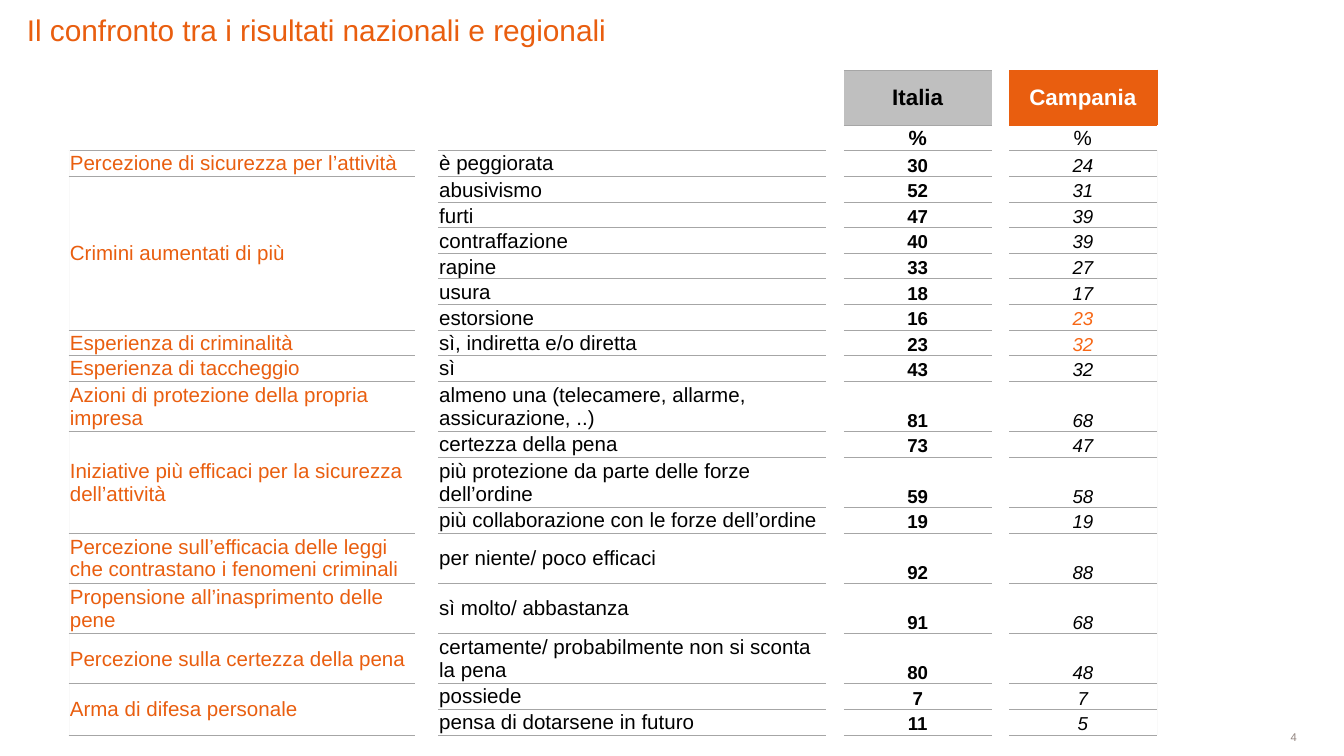
from lxml import etree
from pptx import Presentation
from pptx import util as u
from pptx.dml.color import RGBColor
from pptx.enum import text
from pptx.oxml import ns

ORANGE = RGBColor(0xE9, 0x5E, 0x0F)
HIGHLIGHT = RGBColor(0xF7, 0x67, 0x15)
GREY = RGBColor(0xBF, 0xBF, 0xBF)
RULE = RGBColor(0xA6, 0xA6, 0xA6)
PALE = RGBColor(0xF9, 0xF9, 0xF9)
NUMBER_GREY = RGBColor(0x92, 0x85, 0x80)
WHITE = RGBColor(0xFF, 0xFF, 0xFF)
BLACK = RGBColor(0x00, 0x00, 0x00)

WIDTH = u.Inches(10)
HEIGHT = WIDTH * 9 // 16
PLAIN_STYLE = "{2D5ABB26-0587-4C30-8999-92F81FD0307C}"
COLUMNS = (2.58, 0.17, 2.89, 0.13, 1.1, 0.13, 1.1)
TOPIC, ANSWER, ITALY, REGION = 0, 2, 4, 6
HEADER_ROW, SINGLE_ROW, DOUBLE_ROW = 0.41, 0.18, 0.36
DOUBLE_ROWS = (11, 15, 17)

LEFT, CENTER, RIGHT = text.PP_ALIGN.LEFT, text.PP_ALIGN.CENTER, text.PP_ALIGN.RIGHT
MIDDLE, BOTTOM = text.MSO_ANCHOR.MIDDLE, text.MSO_ANCHOR.BOTTOM

TOPICS = [
    ("Percezione di sicurezza per l’attività", [("è peggiorata", 30, 24)]),
    ("Crimini aumentati di più", [
        ("abusivismo", 52, 31), ("furti", 47, 39), ("contraffazione", 40, 39),
        ("rapine", 33, 27), ("usura", 18, 17), ("estorsione", 16, 23)]),
    ("Esperienza di criminalità", [("sì, indiretta e/o diretta", 23, 32)]),
    ("Esperienza di taccheggio", [("sì", 43, 32)]),
    ("Azioni di protezione della propria impresa",
     [("almeno una (telecamere, allarme, assicurazione, ..)", 81, 68)]),
    ("Iniziative più efficaci per la sicurezza dell’attività", [
        ("certezza della pena", 73, 47),
        ("più protezione da parte delle forze dell’ordine", 59, 58),
        ("più collaborazione con le forze dell’ordine", 19, 19)]),
    ("Percezione sull’efficacia delle leggi che contrastano i fenomeni criminali",
     [("per niente/ poco efficaci", 92, 88)]),
    ("Propensione all’inasprimento delle pene", [("sì molto/ abbastanza", 91, 68)]),
    ("Percezione sulla certezza della pena",
     [("certamente/ probabilmente non si sconta la pena", 80, 48)]),
    ("Arma di difesa personale",
     [("possiede", 7, 7), ("pensa di dotarsene in futuro", 11, 5)]),
]


def percent(left, top, width, height):
    return tuple(int(full * part / 100) for full, part in
                 zip((WIDTH, HEIGHT, WIDTH, HEIGHT), (left, top, width, height)))


def place(shape, box):
    shape.left, shape.top, shape.width, shape.height = box


def write(frame, words, size, color, align, bold=False, italic=False):
    frame.text = words
    para = frame.paragraphs[0]
    para.alignment = align
    for span in para.runs:
        font = span.font
        font.name, font.size, font.bold, font.italic = "Arial", u.Pt(size), bold, italic
        font.color.rgb = color


def clear_margins(frame, anchor):
    frame.margin_left = frame.margin_right = frame.margin_top = frame.margin_bottom = 0
    frame.vertical_anchor = anchor
    frame.word_wrap = True


def add_title(page, box):
    title = page.shapes.title
    place(title, box)
    clear_margins(title.text_frame, BOTTOM)
    write(title.text_frame, "Il confronto tra i risultati nazionali e regionali", 16, ORANGE, LEFT)


def add_page_number(page, box):
    number = page.shapes.add_textbox(*box)
    number.fill.solid()
    number.fill.fore_color.rgb = WHITE
    clear_margins(number.text_frame, MIDDLE)
    write(number.text_frame, "4", 6, NUMBER_GREY, RIGHT)


def style_cell(cell, fill=WHITE, **borders):
    properties = cell._tc.get_or_add_tcPr()
    for side in "LRTB":
        if side in borders:
            line = etree.SubElement(properties, ns.qn("a:ln" + side), w=str(u.Pt(0.25)))
            solid = etree.SubElement(line, ns.qn("a:solidFill"))
            etree.SubElement(solid, ns.qn("a:srgbClr"), val=str(borders[side]))
    cell.fill.solid()
    cell.fill.fore_color.rgb = fill
    cell.margin_left = cell.margin_right = cell.margin_top = u.Pt(0.5)
    cell.margin_bottom = 0
    ending = cell.text_frame.paragraphs[0]._p.get_or_add_endParaRPr()
    ending.set("sz", "800")


def write_cell(cell, words, size, color, align, anchor=MIDDLE, **face):
    cell.vertical_anchor = anchor
    write(cell.text_frame, words, size, color, align, **face)


def fill_headings(table):
    for column in range(len(COLUMNS)):
        if column not in (ITALY, REGION):
            ruled = {"B": RULE} if column in (TOPIC, ANSWER) else {}
            style_cell(table.cell(0, column))
            style_cell(table.cell(1, column), **ruled)
    style_cell(table.cell(0, ITALY), GREY, T=RULE, B=RULE)
    style_cell(table.cell(0, REGION), ORANGE, T=ORANGE, R=ORANGE, B=ORANGE)
    style_cell(table.cell(1, ITALY), T=RULE, B=RULE)
    style_cell(table.cell(1, REGION), T=ORANGE, B=RULE)
    write_cell(table.cell(0, ITALY), "Italia", 12, BLACK, CENTER, bold=True)
    write_cell(table.cell(0, REGION), "Campania", 12, WHITE, CENTER, bold=True)
    write_cell(table.cell(1, ITALY), "%", 11, BLACK, CENTER, bold=True)
    write_cell(table.cell(1, REGION), "%", 11, BLACK, CENTER)


def fill_topic(table, first, topic, answers):
    last = first + len(answers) - 1
    for row, (answer, italy, region) in enumerate(answers, first):
        for column in range(len(COLUMNS)):
            borders = {} if column % 2 else {"T": RULE, "B": RULE}
            if column == TOPIC:
                borders = {"L": PALE}
                if row == first:
                    borders.update(T=RULE, B=RULE)
                if row == last:
                    borders.update(B=RULE)
            elif column == REGION:
                borders["R"] = PALE
            style_cell(table.cell(row, column), **borders)
        answer_anchor = BOTTOM if topic.startswith("Crimini") else MIDDLE
        region_color = HIGHLIGHT if region > italy else BLACK
        write_cell(table.cell(row, ANSWER), answer, 11, BLACK, LEFT, answer_anchor)
        write_cell(table.cell(row, ITALY), str(italy), 10, BLACK, CENTER, BOTTOM, bold=True)
        write_cell(table.cell(row, REGION), str(region), 10, region_color, CENTER, BOTTOM, italic=True)
    write_cell(table.cell(first, TOPIC), topic, 11, ORANGE, LEFT)
    if last > first:
        table.cell(first, TOPIC).merge(table.cell(last, TOPIC))


def add_comparison(page, box):
    row_count = 2 + sum(len(answers) for _, answers in TOPICS)
    frame = page.shapes.add_table(row_count, len(COLUMNS), *box)
    table = frame.table
    table._tbl.tblPr.find(ns.qn("a:tableStyleId")).text = PLAIN_STYLE
    table.first_row = table.horz_banding = False
    for column, weight in zip(table.columns, COLUMNS):
        column.width = int(box[2] * weight / sum(COLUMNS))
    for index, row in enumerate(table.rows):
        row.height = u.Inches(DOUBLE_ROW if index in DOUBLE_ROWS else SINGLE_ROW)
    table.rows[0].height = u.Inches(HEADER_ROW)
    place(frame, box)
    fill_headings(table)
    first = 2
    for topic, answers in TOPICS:
        fill_topic(table, first, topic, answers)
        first += len(answers)


def main():
    deck = Presentation()
    deck.slide_width, deck.slide_height = WIDTH, HEIGHT
    page = deck.slides.add_slide(deck.slide_layouts[5])
    add_page_number(page, percent(83.1, 96.71, 13.4, 1.6))
    add_title(page, percent(2, -0.36, 81.9, 6.58))
    add_comparison(page, percent(5.13, 9.24, 80.95, 88.36))
    deck.save("out.pptx")


if __name__ == "__main__":
    main()
